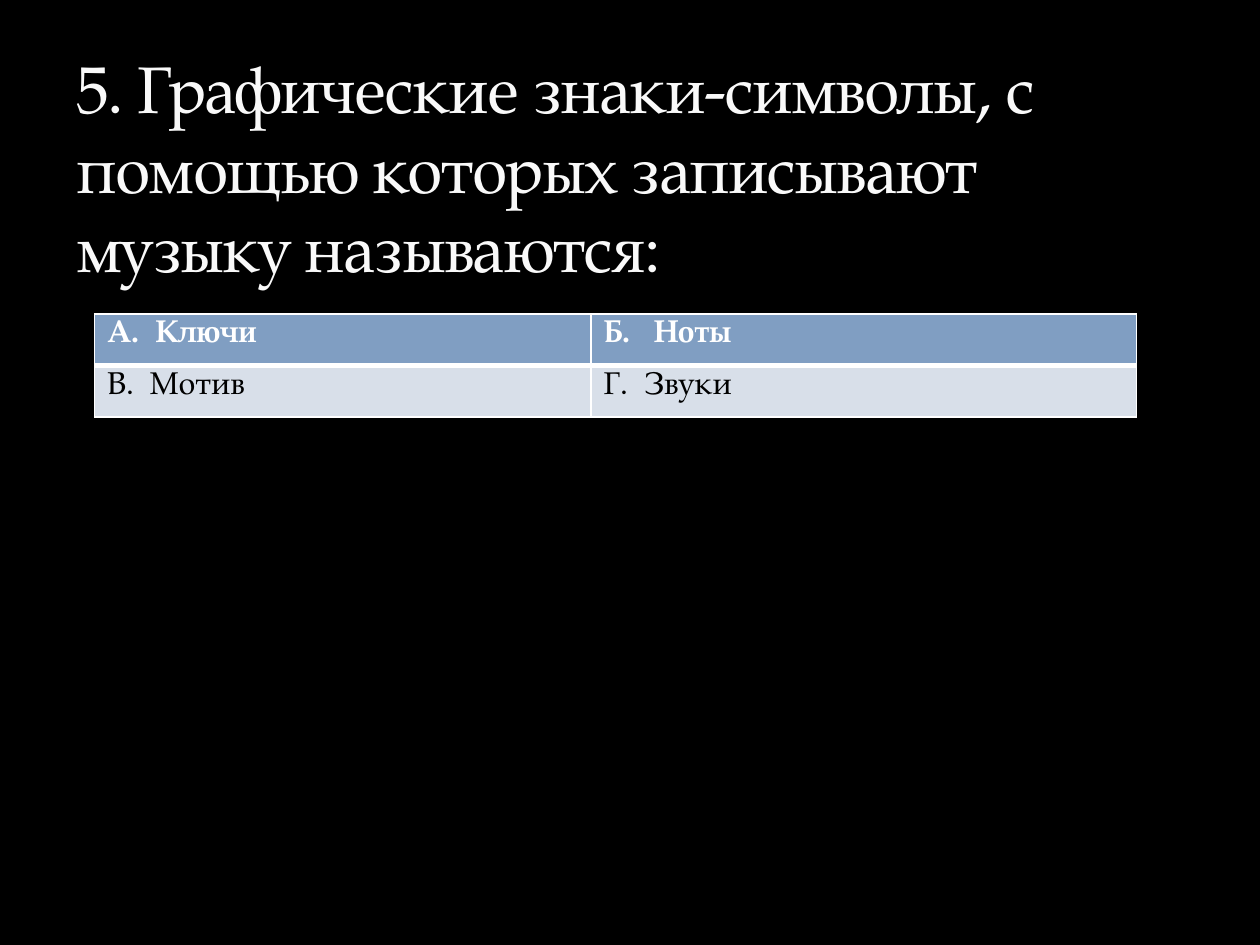
from dataclasses import dataclass

from lxml import etree
from pptx import Presentation
from pptx.dml.color import RGBColor
from pptx.enum.text import MSO_ANCHOR
from pptx.oxml.ns import qn
from pptx.slide import Slide
from pptx.table import _Cell
from pptx.util import Inches, Pt

BOTTOM = MSO_ANCHOR.BOTTOM
FONT = "TeX Gyre Pagella"
COLORS = {
    "background": "000000",
    "title": "F9F9F9",
    "header fill": "809EC2",
    "header text": "FFFFFF",
    "body fill": "D8DFE9",
    "body text": "000000",
    "border": "FFFFFF",
}
THIN, THICK = 1, 3
COLUMN_WIDTHS = (3.94, 4.33)
ROW_HEIGHT = 0.41
QUESTION = "5. Графические знаки-символы, с помощью которых записывают музыку называются:"


@dataclass
class AnswerRow:
    answers: tuple[str, str]
    style: str
    bold: bool
    top_border: float
    bottom_border: float


ANSWER_ROWS = (
    AnswerRow(("A.  Ключи", "Б.   Ноты"), "header", True, THIN, THICK),
    AnswerRow(("B.  Мотив", "Г.  Звуки"), "body", False, THICK, THIN),
)


def color(name: str) -> RGBColor:
    return RGBColor.from_string(COLORS[name])


def set_borders(cell: _Cell, top: float, bottom: float) -> None:
    """Put the border lines before the fill, as the schema requires."""
    properties = cell._tc.get_or_add_tcPr()
    widths = {"a:lnL": THIN, "a:lnR": THIN, "a:lnT": top, "a:lnB": bottom}
    for index, (tag, width) in enumerate(widths.items()):
        line = etree.Element(qn(tag), w=str(Pt(width)))
        fill = etree.SubElement(line, qn("a:solidFill"))
        etree.SubElement(fill, qn("a:srgbClr"), val=COLORS["border"])
        properties.insert(index, line)


def add_title(slide: Slide) -> None:
    shape = slide.shapes.add_textbox(Inches(0.51), Inches(0.99), Inches(9), Inches(1.33))
    frame = shape.text_frame
    frame.word_wrap = True
    frame.vertical_anchor = BOTTOM
    paragraph = frame.paragraphs[0]
    run = paragraph.add_run()
    run.text = QUESTION
    paragraph.font.name = FONT
    paragraph.font.size = Pt(37.8)
    paragraph.font.color.rgb = color("title")
    run.font._element.set("spc", "-100")


def fill_cell(cell: _Cell, text: str, row: AnswerRow) -> None:
    cell.text = text
    cell.fill.solid()
    cell.fill.fore_color.rgb = color(f"{row.style} fill")
    font = cell.text_frame.paragraphs[0].font
    font.name = FONT
    font.size = Pt(18)
    font.bold = row.bold
    font.color.rgb = color(f"{row.style} text")
    set_borders(cell, row.top_border, row.bottom_border)


def add_answer_table(slide: Slide) -> None:
    table = slide.shapes.add_table(
        len(ANSWER_ROWS), len(COLUMN_WIDTHS), Inches(0.75), Inches(2.49),
        Inches(sum(COLUMN_WIDTHS)), Inches(ROW_HEIGHT * len(ANSWER_ROWS)),
    ).table
    for column, width in zip(table.columns, COLUMN_WIDTHS):
        column.width = Inches(width)
    for table_row, answer_row in zip(table.rows, ANSWER_ROWS):
        table_row.height = Inches(ROW_HEIGHT)
        for cell, text in zip(table_row.cells, answer_row.answers):
            fill_cell(cell, text, answer_row)


def main() -> None:
    presentation = Presentation()
    presentation.slide_width = Inches(10)
    presentation.slide_height = Inches(7.5)
    slide = presentation.slides.add_slide(presentation.slide_layouts[6])
    slide.background.fill.solid()
    slide.background.fill.fore_color.rgb = color("background")
    add_answer_table(slide)
    add_title(slide)
    presentation.save("out.pptx")


if __name__ == "__main__":
    main()
